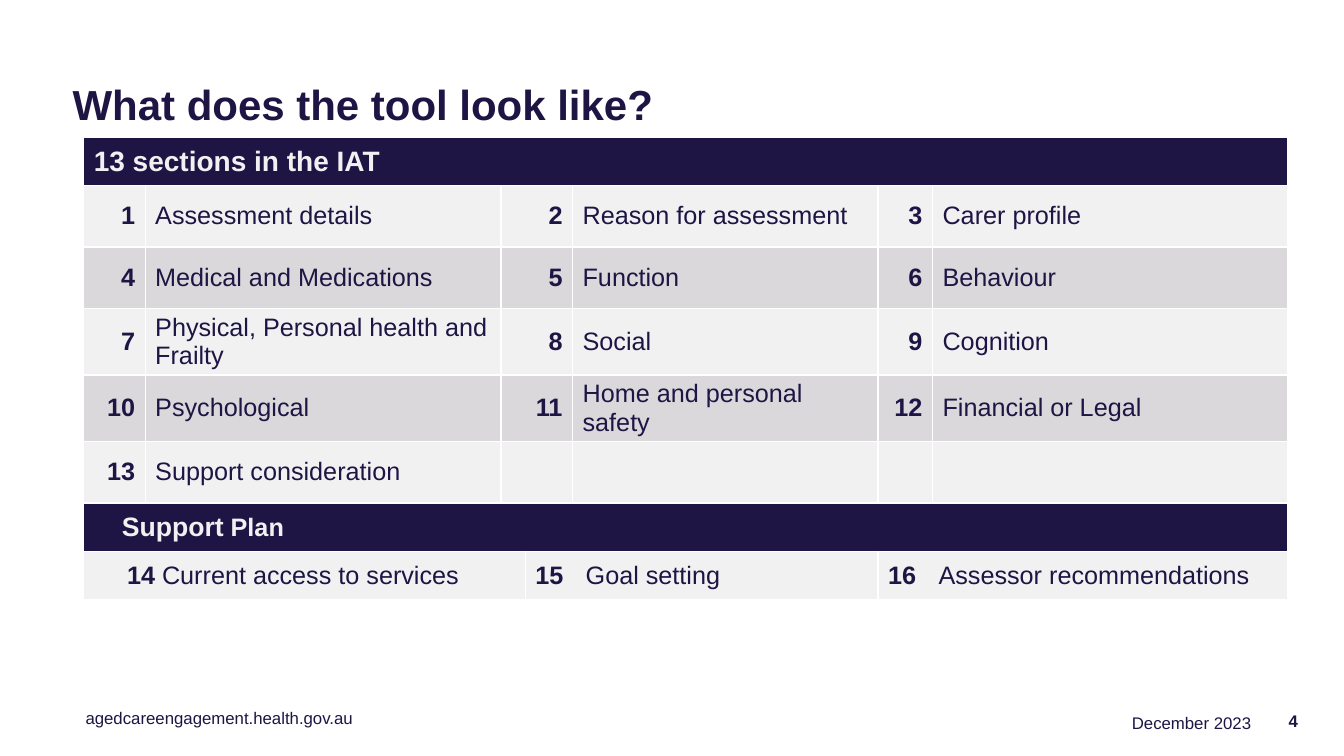
from lxml import etree
from pptx import Presentation
from pptx.dml.color import RGBColor
from pptx.enum import text
from pptx.oxml.ns import qn
from pptx.util import Inches, Pt

NAVY, LIGHT, GREY = "1E1544", "F2F1F2", "DBD8DB"
RIGHT = text.PP_ALIGN.RIGHT

TITLE = "What does the tool look like?"
SECTIONS_HEADING = "13 sections in the IAT"
SECTIONS = [
    "Assessment details", "Reason for assessment", "Carer profile",
    "Medical and Medications", "Function", "Behaviour",
    "Physical, Personal health and Frailty", "Social", "Cognition",
    "Psychological", "Home and personal safety", "Financial or Legal",
    "Support consideration",
]
# First column, last column, number, name, left indent, tab stop
PLAN = [
    (0, 2, "14", " Current access to services", 0.33, None),
    (3, 4, "15", "\tGoal setting", 0, 0.42),
    (5, 6, "16", "\tAssessor recommendations", 0, 0.48),
]
# Text, size, bold, left, top, width, height, alignment
FOOTERS = [
    ("agedcareengagement.health.gov.au", False, 0.75, 6.97, 2.86, 0.3, None),
    ("4", True, 12.52, 6.95, 0.45, 0.4, RIGHT),
    ("December 2023", False, 9.51, 7.02, 3, 0.3, RIGHT),
]
COLUMNS = [0.61, 3.53, 0.17, 0.47, 3.03, 0.54, 3.52]
ROWS = [0.48] + [0.61] * 5 + [0.48] * 2
NUMBER_COLUMNS = (0, 2, 5)
NAME_COLUMNS = (1, 4, 6)


def color(value):
    return RGBColor.from_string(value)


def add_run(paragraph, words, size=18, bold=False, ink=NAVY):
    run = paragraph.add_run()
    run.text = words
    run.font.name = "Arial"
    run.font.size = Pt(size)
    run.font.bold = bold
    run.font.color.rgb = color(ink)


def set_indent(paragraph, left, tab=None):
    """Set the left indent and an optional tab stop, in inches."""
    properties = paragraph._p.get_or_add_pPr()
    properties.set("marL", str(Inches(left)))
    properties.set("indent", "0")
    if tab:
        tabs = etree.SubElement(properties, qn("a:tabLst"))
        etree.SubElement(tabs, qn("a:tab"), pos=str(Inches(tab)), algn="l")


def add_section_table(slide):
    frame = slide.shapes.add_table(
        len(ROWS), len(COLUMNS), Inches(0.83), Inches(1.36),
        Inches(sum(COLUMNS)), Inches(sum(ROWS)))
    table = frame.table
    for column, width in zip(table.columns, COLUMNS):
        column.width = Inches(width)
    for row, height in zip(table.rows, ROWS):
        row.height = Inches(height)

    fills = [NAVY] + [LIGHT, GREY, LIGHT, GREY, LIGHT] + [NAVY, LIGHT]
    for row, fill in zip(table.rows, fills):
        for cell in row.cells:
            cell.fill.solid()
            cell.fill.fore_color.rgb = color(fill)
            cell.vertical_anchor = text.MSO_ANCHOR.MIDDLE

    for row in (0, 6):
        table.cell(row, 0).merge(table.cell(row, 6))
    for row in range(1, 6):
        table.cell(row, 2).merge(table.cell(row, 3))

    heading = table.cell(0, 0).text_frame.paragraphs[0]
    add_run(heading, SECTIONS_HEADING, 20, True, LIGHT)

    for index, name in enumerate(SECTIONS):
        row, group = divmod(index, 3)
        number_cell = table.cell(row + 1, NUMBER_COLUMNS[group])
        name_cell = table.cell(row + 1, NAME_COLUMNS[group])
        number = number_cell.text_frame.paragraphs[0]
        number.alignment = RIGHT
        add_run(number, str(index + 1), bold=True)
        add_run(name_cell.text_frame.paragraphs[0], name)

    plan_heading = table.cell(6, 0).text_frame.paragraphs[0]
    set_indent(plan_heading, 0.28)
    add_run(plan_heading, "Support", 19, True, LIGHT)
    add_run(plan_heading, " Plan", 18, True, LIGHT)

    for first, last, number, name, left, tab in PLAN:
        cell = table.cell(7, first)
        cell.merge(table.cell(7, last))
        paragraph = cell.text_frame.paragraphs[0]
        set_indent(paragraph, left, tab)
        add_run(paragraph, number, bold=True)
        add_run(paragraph, name)


def add_footer(slide, words, bold, left, top, width, height, alignment):
    box = slide.shapes.add_textbox(
        Inches(left), Inches(top), Inches(width), Inches(height))
    frame = box.text_frame
    frame.word_wrap = True
    if bold:
        frame.vertical_anchor = text.MSO_ANCHOR.MIDDLE
    paragraph = frame.paragraphs[0]
    paragraph.alignment = alignment
    add_run(paragraph, words, 12, bold)


def main():
    presentation = Presentation()
    presentation.slide_width = Inches(13.33)
    presentation.slide_height = Inches(7.5)
    slide = presentation.slides.add_slide(presentation.slide_layouts[5])

    title = slide.shapes.title
    title.left, title.top = Inches(0.62), Inches(0.76)
    title.width, title.height = Inches(8.14), Inches(0.6)
    title.text_frame.vertical_anchor = text.MSO_ANCHOR.MIDDLE
    title.text_frame.auto_size = text.MSO_AUTO_SIZE.NONE
    paragraph = title.text_frame.paragraphs[0]
    paragraph.alignment = text.PP_ALIGN.LEFT
    paragraph.line_spacing = 0.9
    add_run(paragraph, TITLE, 30, True)

    add_section_table(slide)
    for footer in FOOTERS:
        add_footer(slide, *footer)
    presentation.save("out.pptx")


if __name__ == "__main__":
    main()
